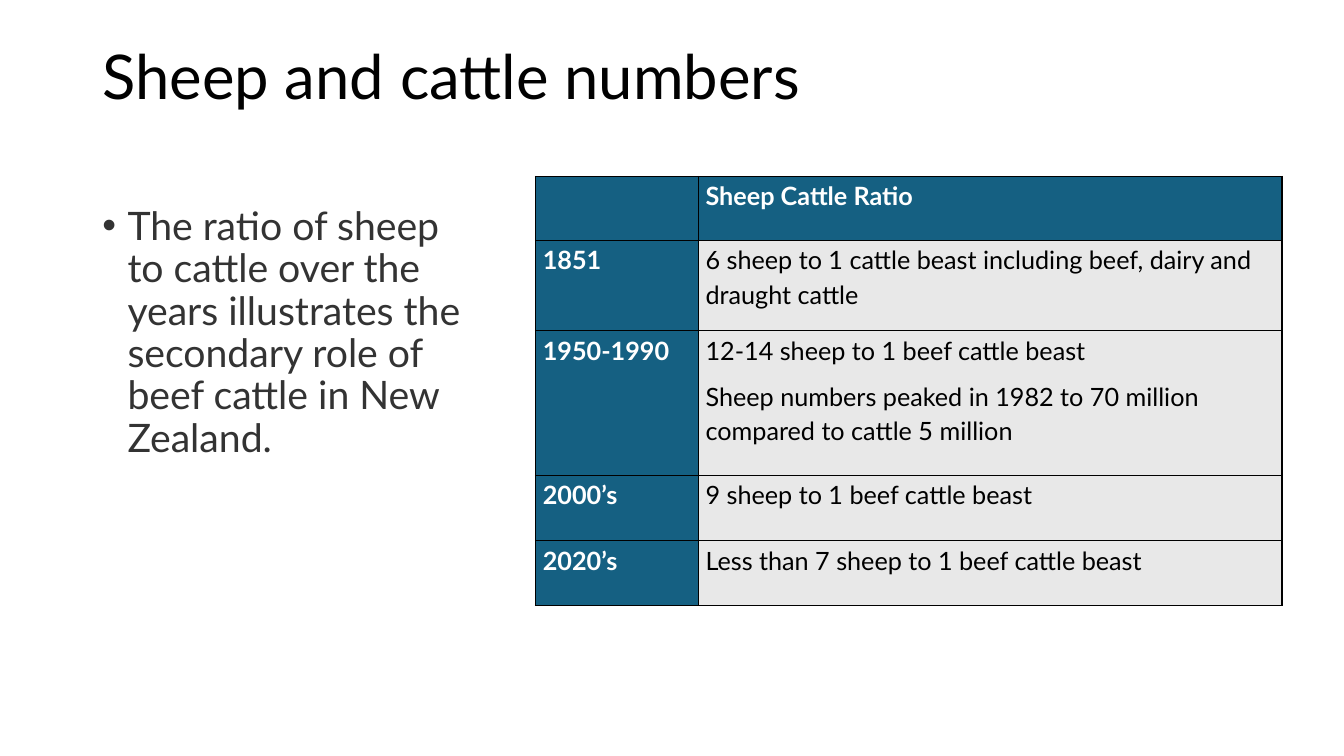
from lxml import etree
from pptx import Presentation
from pptx.dml.color import RGBColor
from pptx.enum.text import MSO_ANCHOR
from pptx.oxml.ns import qn
from pptx.util import Emu, Pt

MIDDLE, TOP = MSO_ANCHOR.MIDDLE, MSO_ANCHOR.TOP
FONT = "Lato"
BLUE, GREY, WHITE, BLACK = "156082", "E8E8E8", "FFFFFF", "000000"

RATIOS = [
    ("", ["Sheep Cattle Ratio"]),
    ("1851", ["6 sheep to 1 cattle beast including beef, dairy and draught cattle"]),
    ("1950-1990", ["12-14 sheep to 1 beef cattle beast",
                   "Sheep numbers peaked in 1982 to 70 million compared to cattle 5 million"]),
    ("2000’s", ["9 sheep to 1 beef cattle beast"]),
    ("2020’s", ["Less than 7 sheep to 1 beef cattle beast"]),
]
COL_WIDTHS = [155, 556]
ROW_HEIGHTS = [61, 86, 138, 62, 62]


def px(n):
    return Emu(n * 9525)


def rgb(color):
    return RGBColor.from_string(color)


def add_run(p, text, size, color, bold=False):
    r = p.add_run()
    r.text = text
    r.font.name, r.font.size, r.font.bold = FONT, Pt(size), bold
    r.font.color.rgb = rgb(color)


def add_text(s, box, text, size, color, anchor):
    tf = s.shapes.add_textbox(*map(px, box)).text_frame
    tf.word_wrap = True
    tf.vertical_anchor = anchor
    p = tf.paragraphs[0]
    p.line_spacing = 0.9
    add_run(p, text, size, color)
    return p


def add_title(s, box):
    add_text(s, box, "Sheep and cattle numbers", 44, "010101", MIDDLE)


def add_bullet(s, box):
    p = add_text(s, box, "The ratio of sheep to cattle over the years illustrates "
                 "the secondary role of beef cattle in New Zealand.", 28, "333333", TOP)
    pPr = p._p.get_or_add_pPr()
    pPr.set("marL", str(px(24)))
    pPr.set("indent", str(px(-24)))
    etree.SubElement(pPr, qn("a:buFont"), typeface="Arial")
    etree.SubElement(pPr, qn("a:buChar"), char="•")


def add_borders(cell):
    # Borders come before the fill in the cell properties
    tcPr = cell._tc.get_or_add_tcPr()
    for i, side in enumerate(("lnL", "lnR", "lnT", "lnB")):
        ln = etree.Element(qn("a:" + side), w=str(Pt(1)))
        fill = etree.SubElement(ln, qn("a:solidFill"))
        etree.SubElement(fill, qn("a:srgbClr"), val=BLACK)
        tcPr.insert(i, ln)


def fill_cell(cell, lines, is_header):
    cell.fill.solid()
    cell.fill.fore_color.rgb = rgb(BLUE if is_header else GREY)
    cell.margin_left = cell.margin_right = px(7)
    cell.margin_top = cell.margin_bottom = 0
    add_borders(cell)
    tf = cell.text_frame
    for i, line in enumerate(lines):
        p = tf.add_paragraph() if i else tf.paragraphs[0]
        p.line_spacing = 1.15
        p.space_after = Pt(8)
        if line:
            add_run(p, line, 18, WHITE if is_header else BLACK, is_header)


def add_ratio_table(s, left, top):
    size = sum(COL_WIDTHS), sum(ROW_HEIGHTS)
    table = s.shapes.add_table(len(RATIOS), len(COL_WIDTHS),
                               *map(px, (left, top, *size))).table
    for col, width in zip(table.columns, COL_WIDTHS):
        col.width = px(width)
    for i, (period, lines) in enumerate(RATIOS):
        table.rows[i].height = px(ROW_HEIGHTS[i])
        fill_cell(table.cell(i, 0), [period], True)
        fill_cell(table.cell(i, 1), lines, i == 0)


def main():
    prs = Presentation()
    prs.slide_width, prs.slide_height = px(1280), px(720)
    s = prs.slides.add_slide(prs.slide_layouts[6])
    add_title(s, (88, 38, 1104, 76))
    add_bullet(s, (88, 192, 373, 457))
    add_ratio_table(s, 510, 168)
    prs.save("out.pptx")


if __name__ == "__main__":
    main()
